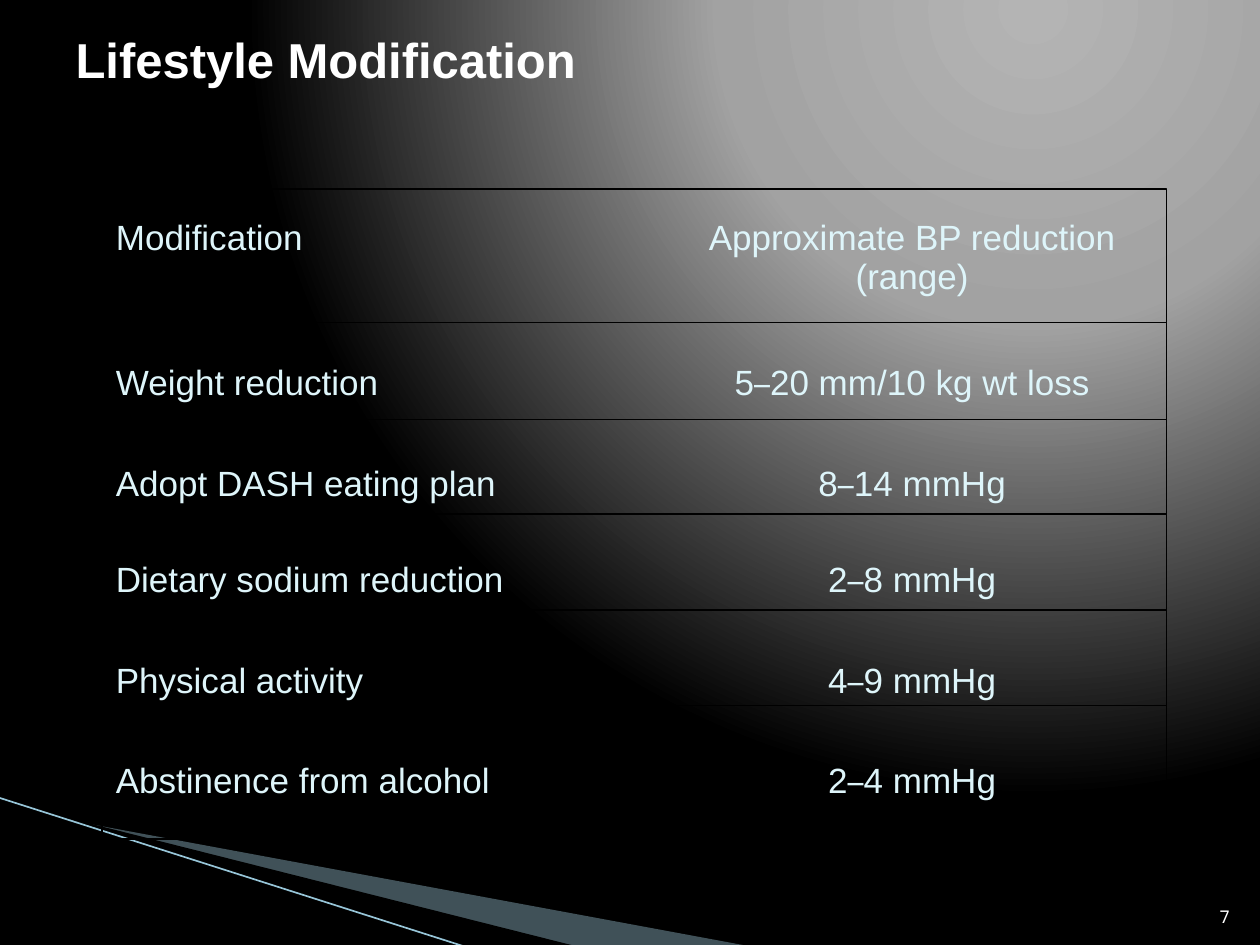
import pptx
import pptx.util
import pptx.oxml
import pptx.oxml.ns
import pptx.dml.color
import pptx.enum.shapes
import pptx.enum.text

Pt = pptx.util.Pt
RGB = pptx.dml.color.RGBColor.from_string
ALIGN = pptx.enum.text.PP_ALIGN
ANCHOR = pptx.enum.text.MSO_ANCHOR
SHAPE = pptx.enum.shapes.MSO_SHAPE
STRAIGHT = pptx.enum.shapes.MSO_CONNECTOR.STRAIGHT
qn = pptx.oxml.ns.qn
NS = pptx.oxml.ns.nsdecls("a")

COLORS = {
    "glow": "B4B4B4", "gray": "A2A2A2", "black": "000000", "white": "FFFFFF",
    "text": "DEF5FA", "wedge": "A0CBDC", "accent": "97C5D8",
}
NO_STYLE = "{2D5ABB26-0587-4C30-8999-92F81FD0307C}"


def add_rule(shapes, x1, y1, x2, y2, color, width):
    rule = shapes.add_connector(STRAIGHT, Pt(x1), Pt(y1), Pt(x2), Pt(y2))
    rule.line.color.rgb = RGB(COLORS[color])
    rule.line.width = Pt(width)
    rule._element.spPr.append(pptx.oxml.parse_xml(f"<a:effectLst {NS}/>"))


def add_wedge(shapes, points, color):
    corners = [(Pt(x), Pt(y)) for x, y in points]
    builder = shapes.build_freeform(*corners[0], scale=1.0)
    builder.add_line_segments(corners[1:], close=True)
    wedge = builder.convert_to_shape()
    wedge.shadow.inherit = False
    wedge.fill.solid()
    wedge.fill.fore_color.rgb = RGB(COLORS[color])
    wedge.line.fill.background()
    return wedge


deck = pptx.Presentation()
deck.slide_width, deck.slide_height = Pt(720), Pt(540)
slide = deck.slides.add_slide(deck.slide_layouts[5])
shapes = slide.shapes

# Background: radial glow from the upper right
slide.background.fill.gradient()
gradient = next(slide.element.iter(qn("a:gradFill")))
stops = "".join(
    f'<a:gs pos="{pos * 1000}"><a:srgbClr val="{COLORS[name]}"/></a:gs>'
    for pos, name in ((0, "glow"), (40, "gray"), (100, "black")))
gradient.getparent().replace(gradient, pptx.oxml.parse_xml(
    f'<a:gradFill {NS} rotWithShape="1"><a:gsLst>{stops}</a:gsLst><a:path path="circle">'
    '<a:fillToRect l="65000" t="0" r="0" b="98000"/></a:path></a:gradFill>'))

# Corner decoration
light_wedge = add_wedge(
    shapes, [(39.6, 468.7), (428.4, 540.7), (328.3, 540.7), (39.6, 468)], "wedge")
wedge_color = next(light_wedge._element.spPr.iter(qn("a:srgbClr")))
wedge_color.append(pptx.oxml.parse_xml(f'<a:alpha {NS} val="40000"/>'))
add_wedge(shapes, [(38.2, 467.3), (329, 540.7), (267.8, 541.4), (38.9, 468)], "black")
add_rule(shapes, -0.7, 455.8, 267.1, 541.4, "accent", 0.95)

# Title
title = shapes.title
title.left, title.top, title.width, title.height = Pt(36), Pt(13), Pt(648), Pt(41)
title.text_frame.text = "Lifestyle Modification"
title.text_frame.vertical_anchor = ANCHOR.BOTTOM
heading = title.text_frame.paragraphs[0]
heading.alignment = ALIGN.LEFT
heading.font.name, heading.font.size, heading.font.bold = "Arial", Pt(28), True
heading.font.color.rgb = RGB(COLORS["white"])

# Slide number
number_box = shapes.add_textbox(Pt(681), Pt(504.7), Pt(28.8), Pt(28.8)).text_frame
number_box.word_wrap = True
number_box.vertical_anchor = ANCHOR.BOTTOM
number_box.text = "7"
number = number_box.paragraphs[0]
number.alignment = ALIGN.RIGHT
number.font.name, number.font.size = "Noto Sans Mono", Pt(10)
number.font.color.rgb = RGB(COLORS["white"])

# One table per modification: top, row heights, modification, reduction
entries = [
    (121.7, [65], "Modification", "Approximate BP reduction\v(range)"),
    (204.5, [18, 18], "Weight reduction", "5–20\u00a0mm/10 kg wt loss"),
    (262.1, [40], "Adopt DASH eating plan", "8–14 mmHg"),
    (316.8, [40], "Dietary sodium reduction", "2–8 mmHg"),
    (374.4, [40], "Physical activity", "4–9 mmHg"),
    (432, [40], "Abstinence from alcohol", "2–4 mmHg"),
]
for top, heights, modification, reduction in entries:
    frame = shapes.add_table(len(heights), 2, Pt(59), Pt(top), Pt(668.9), Pt(sum(heights)))
    table = frame.table
    table.first_row = table.horz_banding = False
    next(table._tbl.iter(qn("a:tableStyleId"))).text = NO_STYLE
    table.columns[0].width, table.columns[1].width = Pt(255.6), Pt(413.3)
    for row, height in zip(table.rows, heights):
        row.height = Pt(height)
    for cell in table.iter_cells():
        cell.fill.background()

    for column, words in enumerate((modification, reduction)):
        line = table.cell(0, column).text_frame.paragraphs[0]
        line.alignment = ALIGN.CENTER if column else ALIGN.LEFT
        if "–" in words:
            for part in words.partition("–"):
                run = line.add_run()
                run.text = part
                run.font.name = "Arial Narrow" if part == "–" else "Arial"
        else:
            line.text = words
            line.font.name = "Arial"
        line.font.size = Pt(20)
        line.font.color.rgb = RGB(COLORS["text"])

# Frame and row rules around the tables
grid = shapes.add_group_shape().shapes
border = grid.add_shape(SHAPE.RECTANGLE, Pt(58.3), Pt(108), Pt(608.4), Pt(371.5))
border.shadow.inherit = False
border.fill.background()
border.line.color.rgb = RGB(COLORS["black"])
border.line.width = Pt(0.75)
for y in (184.3, 239.8, 293.8, 348.5, 403.2):
    add_rule(grid, 58.3, y, 666.7, y, "black", 0.75)

deck.save("out.pptx")
